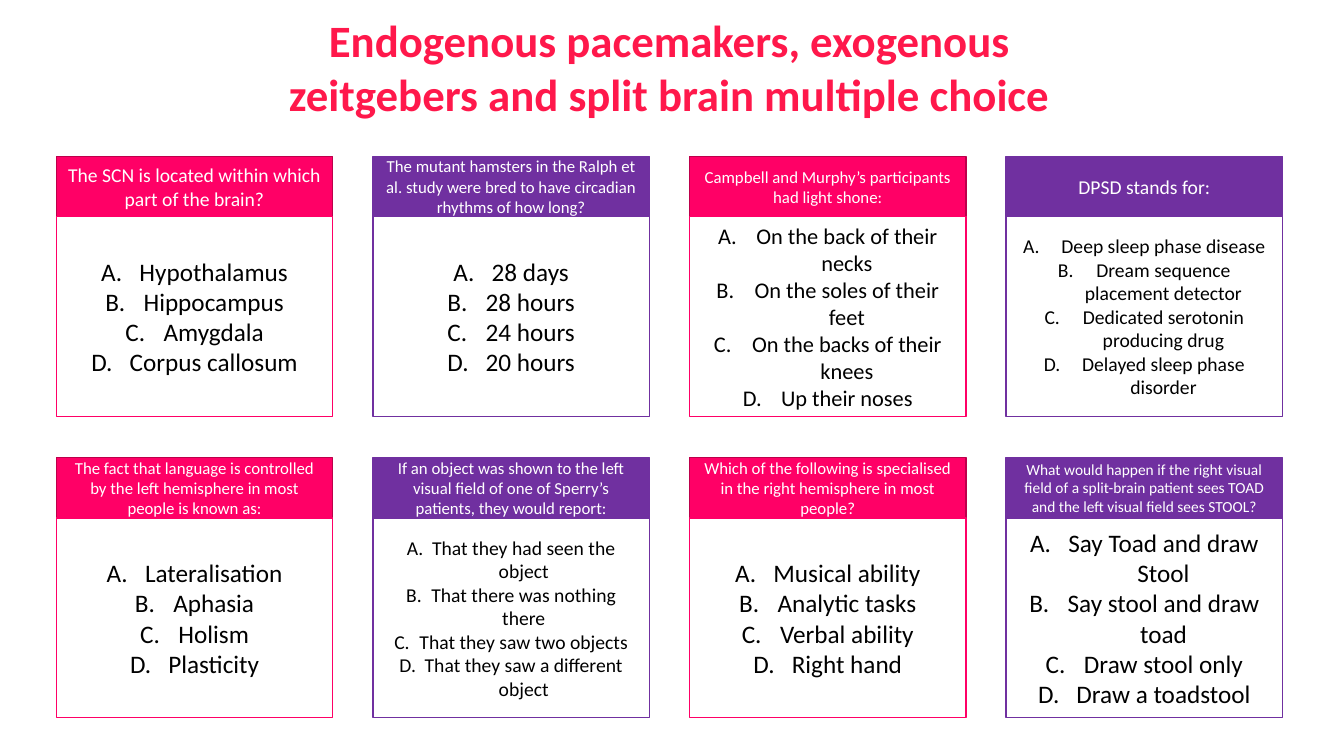
"""Build a slide of eight multiple choice question cards."""
from dataclasses import dataclass

from lxml.etree import SubElement
from pptx import Presentation
from pptx.dml.color import RGBColor as Rgb
from pptx.enum.shapes import MSO_SHAPE as Kind
from pptx.enum.text import MSO_ANCHOR as Anchor, PP_ALIGN as Align
from pptx.oxml.ns import qn
from pptx.shapes.base import BaseShape
from pptx.slide import Slide
from pptx.text.text import TextFrame
from pptx.util import Emu, Pt

PX = 9144
WIDE, HIGH = 1333, 750
COLS = 4
LEFT, TOP = 56, 155
STEP_X, STEP_Y = 314, 299
CARD_W, HEAD_H, BODY_H = 274, 60, 198


@dataclass(frozen=True)
class Theme:
    font: str = "Calibri"
    pink: str = "FF0066"
    rim: str = "BD004B"
    plum: str = "7030A0"
    red: str = "FF184B"
    white: str = "FFFFFF"
    black: str = "000000"
    title: int = 32
    large: int = 18
    mid: int = 16
    base: int = 14
    small: int = 12
    tiny: int = 11


@dataclass(frozen=True)
class Card:
    ask: str
    ask_size: int
    picks: tuple[str, ...]
    size: int
    indent: int = 38


LOOK = Theme()
TITLE = "Endogenous pacemakers, exogenous zeitgebers and split brain multiple choice"
CARDS = (
    Card("The SCN is located within which part of the brain?", LOOK.base,
         ("Hypothalamus", "Hippocampus", "Amygdala", "Corpus callosum"), LOOK.large),
    Card("The mutant hamsters in the Ralph et al. study were bred to have "
         "circadian rhythms of how long?", LOOK.small,
         ("28 days", "28 hours", "24 hours", "20 hours"), LOOK.large),
    Card("Campbell and Murphy’s participants had light shone:", LOOK.small,
         ("On the back of their necks", "On the soles of their feet",
          "On the backs of their knees", "Up their noses"), LOOK.mid),
    Card("DPSD stands for:", LOOK.base,
         ("Deep sleep phase disease", "Dream sequence placement detector",
          "Dedicated serotonin producing drug", "Delayed sleep phase disorder"), LOOK.base),
    Card("The fact that language is controlled by the left hemisphere in most "
         "people is known as:", LOOK.small,
         ("Lateralisation", "Aphasia", "Holism", "Plasticity"), LOOK.large),
    Card("If an object was shown to the left visual field of one of Sperry’s "
         "patients, they would report:", LOOK.small,
         ("That they had seen the object", "That there was nothing there",
          "That they saw two objects", "That they saw a different object"), LOOK.base, 25),
    Card("Which of the following is specialised in the right hemisphere in most "
         "people?", LOOK.small,
         ("Musical ability", "Analytic tasks", "Verbal ability", "Right hand"), LOOK.large),
    Card("What would happen if the right visual field of a split-brain patient sees "
         "TOAD and the left visual field sees STOOL?", LOOK.tiny,
         ("Say Toad and draw Stool", "Say stool and draw toad",
          "Draw stool only", "Draw a toadstool"), LOOK.large),
)


def px(count: int) -> Emu:
    return Emu(count * PX)


def write(frame: TextFrame, text: str, size: int, ink: str, bold: bool = False) -> None:
    frame.word_wrap = True
    frame.text = text
    for para in frame.paragraphs:
        para.alignment = Align.CENTER
        for run in para.runs:
            run.font.name = LOOK.font
            run.font.size = Pt(size)
            run.font.bold = bold
            run.font.color.rgb = Rgb.from_string(ink)


def letter(frame: TextFrame, indent: int) -> None:
    for para in frame.paragraphs:
        props = para._p.get_or_add_pPr()
        props.set("marL", str(px(indent)))
        props.set("indent", str(-px(indent)))
        SubElement(props, qn("a:buFont"), typeface="+mj-lt")
        SubElement(props, qn("a:buAutoNum"), type="alphaUcPeriod")


def panel(slide: Slide, x: int, y: int, high: int, fill: str, line: str) -> BaseShape:
    box = slide.shapes.add_shape(Kind.RECTANGLE, px(x), px(y), px(CARD_W), px(high))
    box.shadow.inherit = False
    box.fill.solid()
    box.fill.fore_color.rgb = Rgb.from_string(fill)
    box.line.color.rgb = Rgb.from_string(line)
    box.line.width = Pt(1)
    box.text_frame.vertical_anchor = Anchor.MIDDLE
    return box


def draw(slide: Slide, card: Card, spot: int) -> None:
    row, col = divmod(spot, COLS)
    x, y = LEFT + col * STEP_X, TOP + row * STEP_Y
    fill, rim = (LOOK.plum, LOOK.plum) if col % 2 else (LOOK.pink, LOOK.rim)
    head = panel(slide, x, y, HEAD_H, fill, rim)
    write(head.text_frame, card.ask, card.ask_size, LOOK.white)
    body = panel(slide, x, y + HEAD_H, BODY_H, LOOK.white, fill)
    write(body.text_frame, "\n".join(card.picks), card.size, LOOK.black)
    letter(body.text_frame, card.indent)


def main() -> None:
    deck = Presentation()
    deck.slide_width, deck.slide_height = px(WIDE), px(HIGH)
    slide = deck.slides.add_slide(deck.slide_layouts[6])
    for spot, card in enumerate(CARDS):
        draw(slide, card, spot)
    title = slide.shapes.add_textbox(px(240), px(8), px(848), px(118))
    write(title.text_frame, TITLE, LOOK.title, LOOK.red, bold=True)
    deck.save("out.pptx")


if __name__ == "__main__":
    main()
